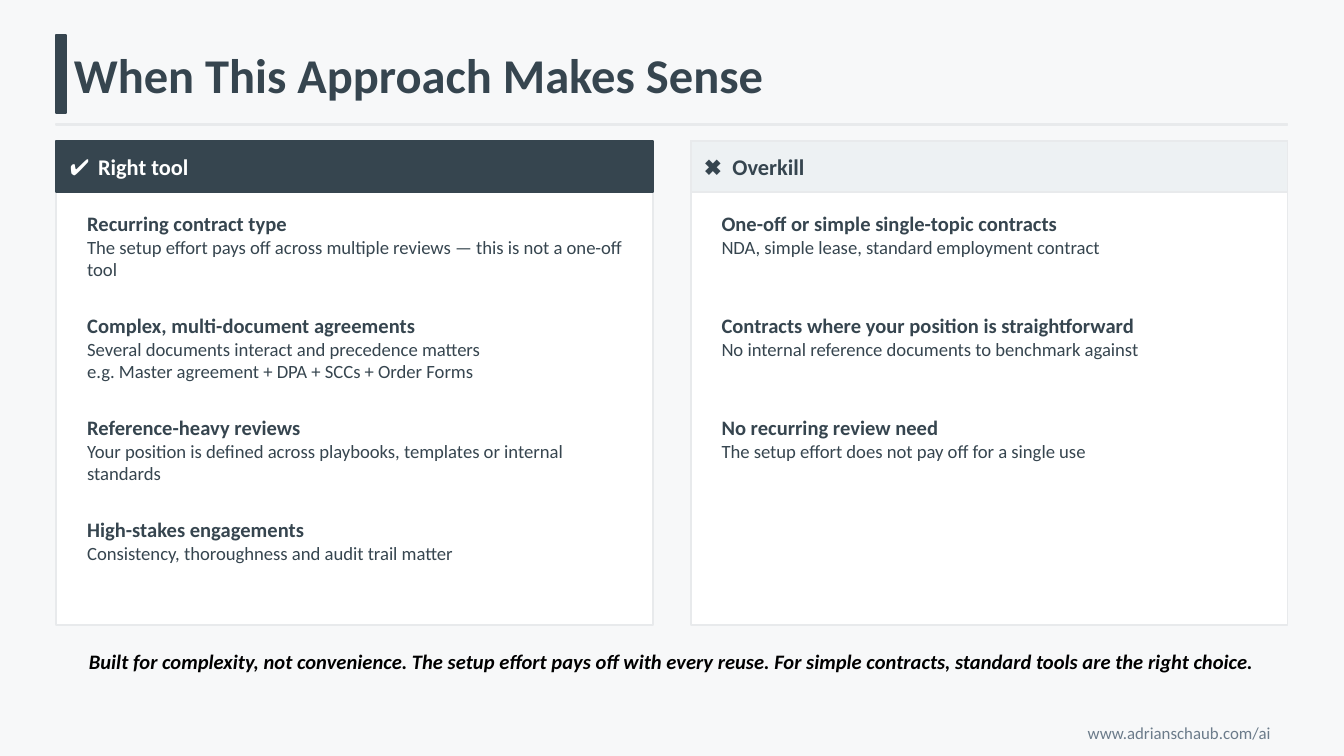
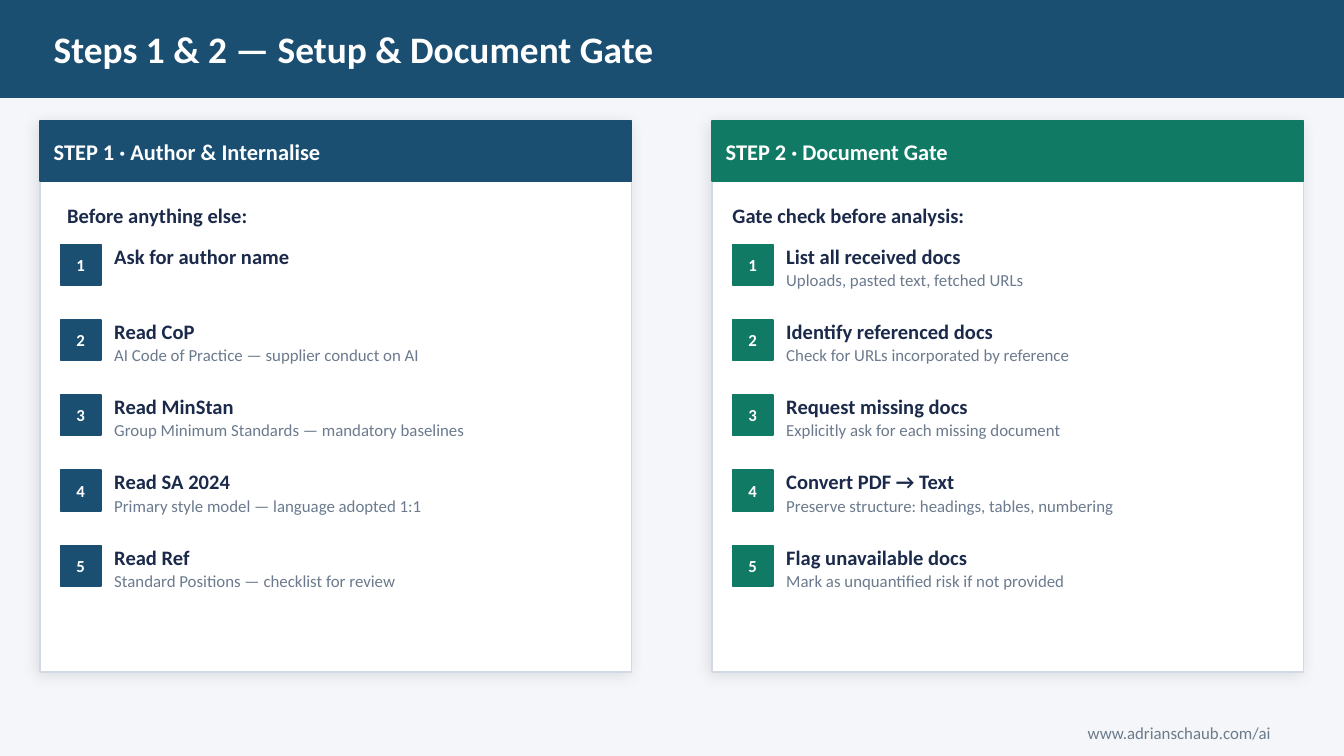
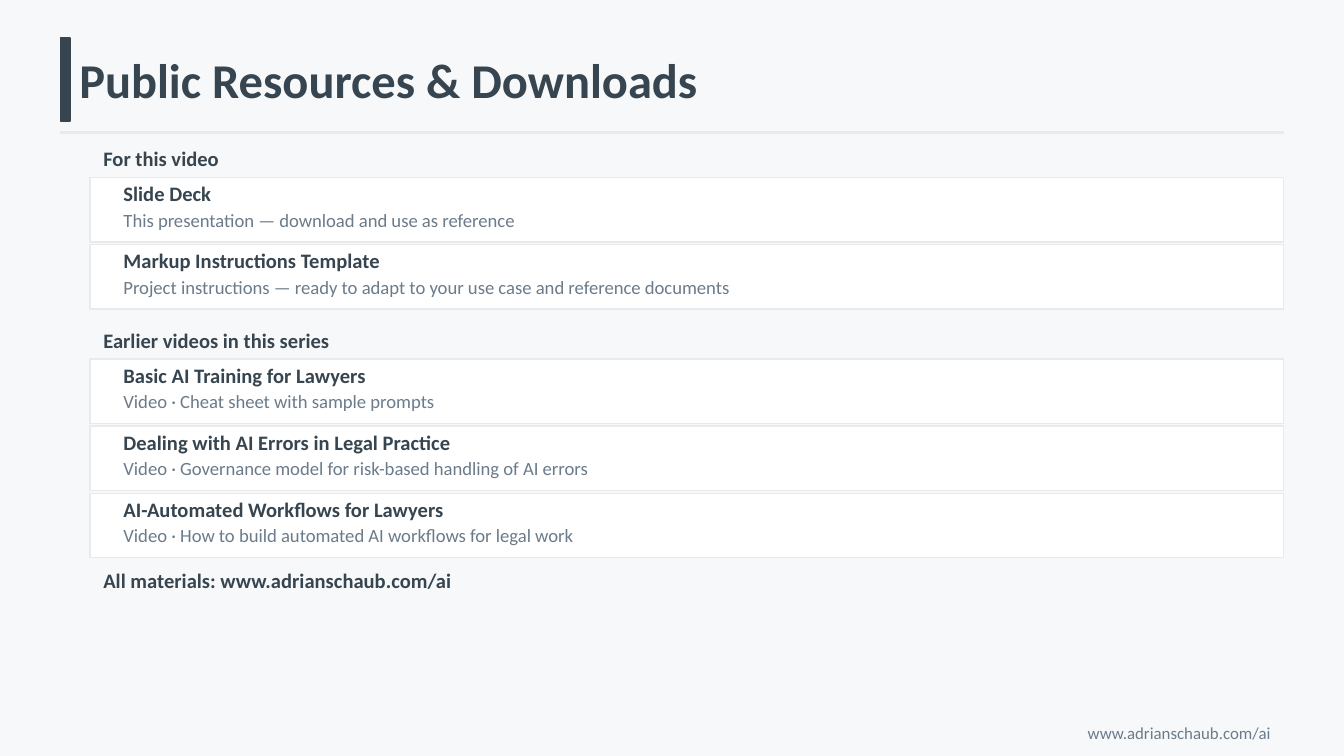
from dataclasses import dataclass

from lxml import etree
from pptx import Presentation
from pptx.dml.color import RGBColor
from pptx.enum.shapes import MSO_SHAPE
from pptx.enum.text import MSO_ANCHOR, PP_ALIGN
from pptx.oxml.ns import qn
from pptx.util import Inches, Pt


@dataclass(frozen=True)
class Theme:
    font: str = "Calibri"
    white: str = "FFFFFF"
    black: str = "000000"
    paper: str = "F7F8F9"
    mist: str = "F4F6F9"
    slate: str = "36454F"
    rule: str = "E8EAEC"
    pale: str = "EDF1F3"
    gray: str = "6B7B8A"
    detail: str = "6B7A8D"
    navy: str = "1B4F72"
    green: str = "117A65"
    ink: str = "1B2A4A"
    card_line: str = "D1D9E6"
    title: int = 26
    band: int = 20
    header: int = 12
    heading: int = 11
    body: int = 10
    small: int = 9


THEME = Theme()
RIGHT_EDGE = 9.55


class DeckBuilder:
    """Holds the theme and the slide being drawn."""

    def __init__(self, theme):
        self.theme = theme
        self.deck = Presentation()
        self.deck.slide_width = Inches(10)
        self.deck.slide_height = Inches(10) * 9 // 16
        self.page = None

    def new_page(self, background):
        self.page = self.deck.slides.add_slide(self.deck.slide_layouts[6])
        fill = self.page.background.fill
        fill.solid()
        fill.fore_color.rgb = RGBColor.from_string(background)

    def rect(self, left, top, width, height, fill, line=None, weight=1):
        shape = self.page.shapes.add_shape(
            MSO_SHAPE.RECTANGLE, Inches(left), Inches(top), Inches(width), Inches(height))
        shape.shadow.inherit = False
        shape.fill.solid()
        shape.fill.fore_color.rgb = RGBColor.from_string(fill)
        shape.line.color.rgb = RGBColor.from_string(line or fill)
        shape.line.width = Pt(weight)
        return shape

    def text(self, left, top, width, height, words, size, color, bold=False, italic=False,
             align=PP_ALIGN.LEFT, anchor=MSO_ANCHOR.MIDDLE, inset=False, tab=None):
        """Add a text box, one paragraph per line of words, and return its paragraphs."""
        box = self.page.shapes.add_textbox(
            Inches(left), Inches(top), Inches(width), Inches(height))
        frame = box.text_frame
        frame.word_wrap = True
        frame.vertical_anchor = anchor
        if not inset:
            frame.margin_left = frame.margin_right = 0
            frame.margin_top = frame.margin_bottom = 0
        frame.text = words
        for para in frame.paragraphs:
            para.alignment = align
            if tab:
                tabs = etree.SubElement(para._p.get_or_add_pPr(), qn("a:tabLst"))
                etree.SubElement(tabs, qn("a:tab"), pos=str(Inches(tab)), algn="l")
            for span in para.runs:
                self.style(span, size, color, bold, italic)
        return frame.paragraphs

    def style(self, span, size, color, bold=False, italic=False):
        span.font.name = self.theme.font
        span.font.size = Pt(size)
        span.font.bold = bold
        span.font.italic = italic
        span.font.color.rgb = RGBColor.from_string(color)

    def heading(self, left, top, width, height, words, color=None, inset=False):
        self.text(left, top, width, height, words, self.theme.heading,
                  color or self.theme.slate, bold=True, inset=inset)

    def title(self, left, top, height, gap, words):
        """Add a title with an accent bar before it and a rule below it."""
        theme = self.theme
        self.rect(left, top, 0.07, height, theme.slate)
        self.text(left + gap, top, RIGHT_EDGE - left - gap, height, words,
                  theme.title, theme.slate, bold=True)
        self.rect(left, top + height + 0.08, 10 - 2 * left, 0.01, theme.rule)

    def title_band(self, words):
        theme = self.theme
        self.rect(0, 0, 10, 0.72, theme.navy)
        self.text(0.4, 0, 9.2, 0.72, words, theme.band, theme.white, bold=True)

    def card(self, left, top, width, height, card_line, header_height, header,
             fill, color, header_line=None, shadow=False, tab=None):
        theme = self.theme
        body = self.rect(left, top, width, height, theme.white, card_line)
        if shadow:
            self.soft_shadow(body)
        self.rect(left, top, width, header_height, fill, header_line)
        self.text(left + 0.1, top, width - 0.2, header_height, header,
                  theme.header, color, bold=True, tab=tab)

    def soft_shadow(self, shape):
        effects = shape._element.spPr.find(qn("a:effectLst"))
        outer = etree.SubElement(effects, qn("a:outerShdw"), blurRad=str(Pt(8)),
                                 dist=str(Pt(2)), dir=str(135 * 60000),
                                 algn="bl", rotWithShape="0")
        color = etree.SubElement(outer, qn("a:srgbClr"), val=self.theme.black)
        etree.SubElement(color, qn("a:alpha"), val="10000")

    def topic(self, left, top, name, detail):
        """Add a bold heading and, after a line break, its body text."""
        theme = self.theme
        first, *_ = self.text(left, top, 4.18, 0.72, f"{name}\v{detail}", theme.body,
                              theme.slate, anchor=MSO_ANCHOR.TOP, inset=True)
        self.style(first.runs[0], theme.heading, theme.slate, bold=True)
        line_break = first._p.find(qn("a:br"))
        etree.SubElement(line_break, qn("a:rPr"), sz=str(theme.heading * 100))

    def step(self, left, top, number, name, detail, color):
        theme = self.theme
        self.rect(left, top, 0.3, 0.3, color)
        self.text(left, top, 0.3, 0.3, str(number), theme.small, theme.white,
                  bold=True, align=PP_ALIGN.CENTER)
        self.heading(left + 0.4, top, 3.65, 0.17, name, theme.ink)
        if detail:
            self.text(left + 0.4, top + 0.17, 3.65, 0.18, detail, theme.small, theme.detail)

    def resource(self, left, top, name, detail):
        theme = self.theme
        width = RIGHT_EDGE - left
        self.rect(left, top, width, 0.48, theme.white, theme.rule, 0.75)
        self.heading(left + 0.15, top + 0.02, width - 0.3, 0.2, name, inset=True)
        self.text(left + 0.15, top + 0.23, width - 0.3, 0.17, detail,
                  theme.body, theme.gray, inset=True)

    def footer(self):
        self.text(0.45, 5.34, 9.1, 0.22, "www.adrianschaub.com/ai", self.theme.small,
                  self.theme.gray, align=PP_ALIGN.RIGHT, inset=True)


def build_fit_page(builder):
    theme = builder.theme
    builder.new_page(theme.paper)
    builder.title(0.42, 0.26, 0.58, 0.13, "When This Approach Makes Sense")
    cards = [
        ("✔\tRight tool", theme.slate, theme.white, theme.slate, [
            ("Recurring contract type",
             "The setup effort pays off across multiple reviews — this is not a one-off tool"),
            ("Complex, multi-document agreements",
             "Several documents interact and precedence matters\n"
             "e.g. Master agreement + DPA + SCCs + Order Forms"),
            ("Reference-heavy reviews",
             "Your position is defined across playbooks, templates or internal standards"),
            ("High-stakes engagements",
             "Consistency, thoroughness and audit trail matter"),
        ]),
        ("✖\tOverkill", theme.pale, theme.slate, theme.rule, [
            ("One-off or simple single-topic contracts",
             "NDA, simple lease, standard employment contract"),
            ("Contracts where your position is straightforward",
             "No internal reference documents to benchmark against"),
            ("No recurring review need",
             "The setup effort does not pay off for a single use"),
        ]),
    ]
    for column, (header, fill, color, line, topics) in enumerate(cards):
        left = 0.42 + 4.72 * column
        builder.card(left, 1.05, 4.44, 3.6, theme.rule, 0.38, header, fill, color,
                     header_line=line, tab=0.21)
        for row, (name, detail) in enumerate(topics):
            builder.topic(left + 0.13, 1.52 + 0.76 * row, name, detail)
    builder.text(0.42, 4.72, 9.16, 0.4,
                 "Built for complexity, not convenience. The setup effort pays off with every "
                 "reuse. For simple contracts, standard tools are the right choice.",
                 theme.heading, theme.black, bold=True, italic=True,
                 align=PP_ALIGN.CENTER, inset=True)
    builder.footer()


def build_steps_page(builder):
    theme = builder.theme
    builder.new_page(theme.mist)
    builder.title_band("Steps 1 & 2 — Setup & Document Gate")
    cards = [
        ("STEP 1 · Author & Internalise", theme.navy, "Before anything else:", 0.2, [
            ("Ask for author name", None),
            ("Read CoP", "AI Code of Practice — supplier conduct on AI"),
            ("Read MinStan", "Group Minimum Standards — mandatory baselines"),
            ("Read SA 2024", "Primary style model — language adopted 1:1"),
            ("Read Ref", "Standard Positions — checklist for review"),
        ]),
        ("STEP 2 · Document Gate", theme.green, "Gate check before analysis:", 0.15, [
            ("List all received docs", "Uploads, pasted text, fetched URLs"),
            ("Identify referenced docs", "Check for URLs incorporated by reference"),
            ("Request missing docs", "Explicitly ask for each missing document"),
            ("Convert PDF → Text", "Preserve structure: headings, tables, numbering"),
            ("Flag unavailable docs", "Mark as unquantified risk if not provided"),
        ]),
    ]
    for column, (header, color, intro, intro_indent, steps) in enumerate(cards):
        left = 0.3 + 5 * column
        builder.card(left, 0.9, 4.4, 4.1, theme.card_line, 0.45, header, color,
                     theme.white, shadow=True)
        builder.heading(left + intro_indent, 1.45, 4, 0.3, intro, theme.ink)
        for row, (name, detail) in enumerate(steps):
            builder.step(left + 0.15, 1.82 + 0.56 * row, row + 1, name, detail, color)
    builder.footer()


def build_resources_page(builder):
    builder.new_page(builder.theme.paper)
    builder.title(0.45, 0.28, 0.62, 0.14, "Public Resources & Downloads")
    left = 0.67
    width = RIGHT_EDGE - left
    groups = [
        (1.05, "For this video", [
            ("Slide Deck", "This presentation — download and use as reference"),
            ("Markup Instructions Template",
             "Project instructions — ready to adapt to your use case and reference documents"),
        ]),
        (2.4, "Earlier videos in this series", [
            ("Basic AI Training for Lawyers", "Video · Cheat sheet with sample prompts"),
            ("Dealing with AI Errors in Legal Practice",
             "Video · Governance model for risk-based handling of AI errors"),
            ("AI-Automated Workflows for Lawyers",
             "Video · How to build automated AI workflows for legal work"),
        ]),
    ]
    for top, group_name, resources in groups:
        builder.heading(left, top, width, 0.26, group_name, inset=True)
        for row, (name, detail) in enumerate(resources):
            builder.resource(left, top + 0.27 + 0.5 * row, name, detail)
    builder.heading(left, 4.19, width, 0.26, "All materials: www.adrianschaub.com/ai", inset=True)
    builder.footer()


def main():
    builder = DeckBuilder(THEME)
    build_fit_page(builder)
    build_steps_page(builder)
    build_resources_page(builder)
    builder.deck.save("out.pptx")


if __name__ == "__main__":
    main()
